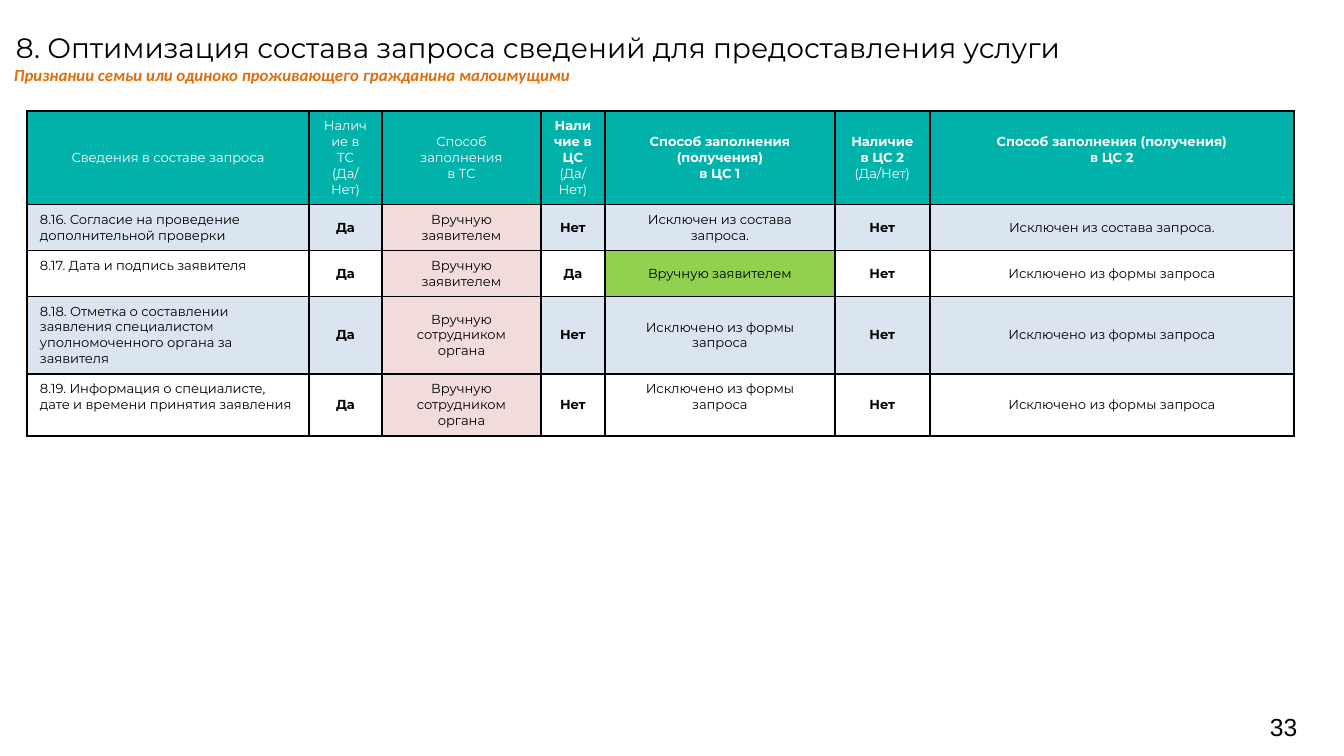
from lxml.etree import SubElement
from pptx import Presentation
from pptx.dml.color import RGBColor
from pptx.enum.text import MSO_ANCHOR, MSO_AUTO_SIZE, PP_ALIGN
from pptx.oxml.ns import qn
from pptx.util import Pt

SCALE = 914400 / 134.4
HUES = {"black": "000000", "white": "FFFFFF", "teal": "00B2A9", "blue": "4F81BD",
        "pink": "F1DCDB", "green": "92D050", "orange": "E36C09"}
COLS = [282, 73, 159, 64, 230, 95, 364]
ROWS = [93, 45, 46, 77, 61]
HEAD = [("Сведения в составе запроса", 0), ("Наличие в ТС\n(Да/Нет)", 0),
        ("Способ заполнения\nв ТС", 0), ("Наличие в ЦС\n(Да/Нет)", 1),
        ("Способ заполнения (получения)\nв ЦС 1", 2),
        ("Наличие в ЦС 2\n(Да/Нет)", 1),
        ("Способ заполнения (получения)\nв ЦС 2", 2)]
HAND = "Вручную заявителем"
STAFF = "Вручную сотрудником органа"
CUT = "Исключен из состава запроса."
OUT = "Исключено из формы запроса"
BODY = [
    ["8.16. Согласие на проведение дополнительной проверки",
     "Да", HAND, "Нет", CUT, "Нет", CUT],
    ["8.17. Дата и подпись заявителя", "Да", HAND, "Да", HAND, "Нет", OUT],
    ["8.18. Отметка о составлении заявления специалистом уполномоченного органа за заявителя",
     "Да", STAFF, "Нет", OUT, "Нет", OUT],
    ["8.19. Информация о специалисте, дате и времени принятия заявления",
     "Да", STAFF, "Нет", OUT, "Нет", OUT],
]
RAISED = {(0, 6), (4, 4)}


def px(count):
    """Turn whole px into EMU."""
    return round(count * SCALE)


def put(frame, text, size=7, font="Montserrat", hue="black", strong=0,
        slant=False, align=PP_ALIGN.LEFT):
    """Write lines into a frame, the first few of them bold."""
    for i, line in enumerate(text.split("\n")):
        para = frame.paragraphs[0] if i == 0 else frame.add_paragraph()
        para.alignment = align
        run = para.add_run()
        run.text = line
        face = run.font
        face.name, face.size = font, Pt(size)
        face.bold, face.italic = i < strong, slant
        face.color.rgb = RGBColor.from_string(HUES[hue])


class Deck:
    """Hold the style and the current slide."""

    def __init__(self, wide, high):
        """Open a deck with one titled slide."""
        self.show = Presentation()
        self.show.slide_width, self.show.slide_height = px(wide), px(high)
        self.slide = self.show.slides.add_slide(self.show.slide_layouts[5])

    def frame(self, shape, inset, anchor):
        """Set the insets and anchor of a shape and return its frame."""
        frame = shape.text_frame
        frame.word_wrap, frame.auto_size = True, MSO_AUTO_SIZE.NONE
        frame.vertical_anchor = anchor
        frame.margin_left = frame.margin_right = px(inset[0])
        frame.margin_top = frame.margin_bottom = px(inset[1])
        return frame

    def title(self, text, left, top, wide, high, **style):
        """Move and fill the title."""
        shape = self.slide.shapes.title
        shape.left, shape.top = px(left), px(top)
        shape.width, shape.height = px(wide), px(high)
        put(self.frame(shape, (0, 0), MSO_ANCHOR.TOP), text, **style)

    def label(self, text, left, top, wide, high, inset=(0, 0),
              anchor=MSO_ANCHOR.TOP, **style):
        """Add a text box."""
        shape = self.slide.shapes.add_textbox(px(left), px(top), px(wide), px(high))
        put(self.frame(shape, inset, anchor), text, **style)

    def grid(self, left, top, cols, rows):
        """Add a plain table with the given tracks."""
        table = self.slide.shapes.add_table(
            len(rows), len(cols), px(left), px(top), px(sum(cols)), px(sum(rows))).table
        table.first_row = table.horz_banding = False
        for track, wide in zip(table.columns, cols):
            track.width = px(wide)
        for track, high in zip(table.rows, rows):
            track.height = px(high)
        return table

    def cell(self, cell, text, fill, alpha=100, lift=0, anchor=MSO_ANCHOR.MIDDLE, **style):
        """Fill, edge and write one cell."""
        cell.vertical_anchor = anchor
        cell.margin_left = cell.margin_right = px(13)
        cell.margin_top, cell.margin_bottom = px(7), px(7 + lift)
        props = cell._tc.get_or_add_tcPr()
        for side in ("a:lnL", "a:lnR", "a:lnT", "a:lnB"):
            edge = SubElement(props, qn(side), w=str(Pt(1)))
            SubElement(SubElement(edge, qn("a:solidFill")), qn("a:srgbClr"), val=HUES["black"])
        cell.fill.solid()
        cell.fill.fore_color.rgb = RGBColor.from_string(HUES[fill])
        if alpha < 100:
            tint = props.find(qn("a:solidFill"))[0]
            SubElement(tint, qn("a:alpha"), val=str(alpha * 1000))
        put(cell.text_frame, text, **style)


def main():
    """Build the slide."""
    deck = Deck(1344, 756)
    deck.label("33", 1270, 707, 63, 40, anchor=MSO_ANCHOR.MIDDLE, size=13.2, font="Arial")
    deck.title("8. Оптимизация состава запроса сведений для предоставления услуги",
               16, 31, 1068, 39, size=15)
    table = deck.grid(27, 111, COLS, ROWS)
    for c, (text, strong) in enumerate(HEAD):
        deck.cell(table.cell(0, c), text, "teal", lift=16 if (0, c) in RAISED else 0,
                  hue="white", strong=strong, align=PP_ALIGN.CENTER)
    for r, row in enumerate(BODY, 1):
        for c, text in enumerate(row):
            fill, alpha = ("blue", 20) if r % 2 else ("white", 100)
            if c == 2:
                fill, alpha = "pink", 100
            elif (r, c) == (2, 4):
                fill = "green"
            deck.cell(table.cell(r, c), text, fill, alpha,
                      lift=16 if (r, c) in RAISED else 0,
                      anchor=MSO_ANCHOR.MIDDLE if c else MSO_ANCHOR.TOP,
                      strong=int(c in (1, 3, 5)),
                      align=PP_ALIGN.CENTER if c else PP_ALIGN.LEFT)
    deck.label("Признании семьи или одиноко проживающего гражданина малоимущими",
               1, 58, 1052, 34, inset=(13, 7), size=9, font="Calibri",
               hue="orange", strong=1, slant=True)
    deck.show.save("out.pptx")


if __name__ == "__main__":
    main()
